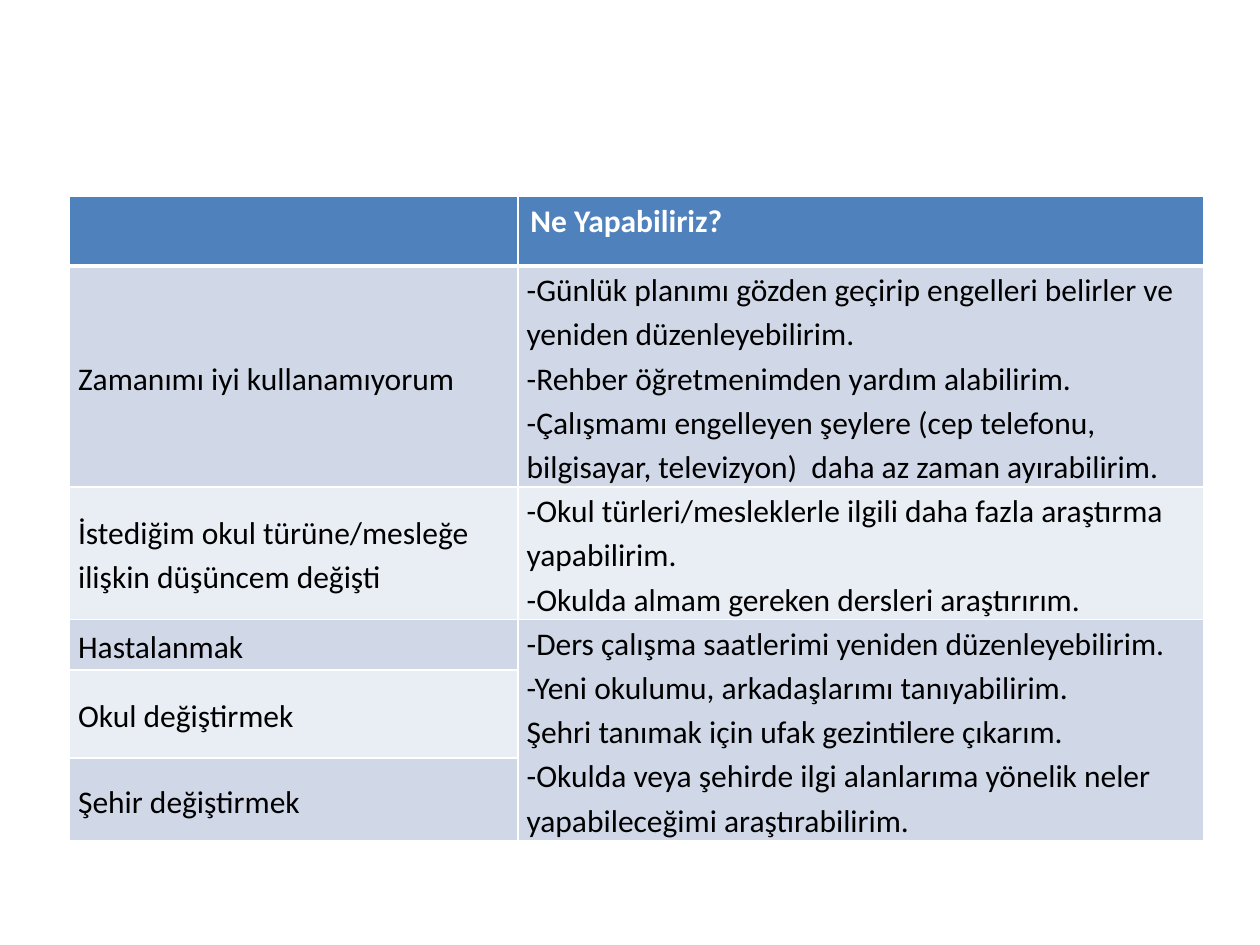
"""Build a slide with a table of study problems and what can be done about them."""
import pptx
import pptx.dml.color
import pptx.enum.text
import pptx.oxml
import pptx.oxml.ns
import pptx.util
from pptx.util import Inches, Pt

HEAD = ["", "Ne Yapabiliriz?"]
ROWS = [
    ("Zamanımı iyi kullanamıyorum", [
        "-Günlük planımı gözden geçirip engelleri belirler ve yeniden düzenleyebilirim.",
        "-Rehber öğretmenimden yardım alabilirim.",
        "-Çalışmamı engelleyen şeylere (cep telefonu, bilgisayar, televizyon)  daha az zaman ayırabilirim."]),
    ("İstediğim okul türüne/mesleğe ilişkin düşüncem değişti", [
        "-Okul türleri/mesleklerle ilgili daha fazla araştırma yapabilirim.",
        "-Okulda almam gereken dersleri araştırırım."]),
    ("Hastalanmak", [
        "-Ders çalışma saatlerimi yeniden düzenleyebilirim.",
        "-Yeni okulumu, arkadaşlarımı tanıyabilirim.",
        "Şehri tanımak için ufak gezintilere çıkarım.",
        "-Okulda veya şehirde ilgi alanlarıma yönelik neler yapabileceğimi araştırabilirim."]),
    ("Okul değiştirmek", []),
    ("Şehir değiştirmek", []),
]
WIDTHS = [3.56, 5.44]
HEIGHTS = [0.55, 1.15, 0.58, 0.4, 0.7, 0.55]
BLUE, BANDS = "4F81BD", ["D0D8E8", "E9EDF4"]
WHITE, BLACK = "FFFFFF", "000000"


def color(code):
    return pptx.dml.color.RGBColor.from_string(code)


def border(cell, row):
    """Draw white cell edges, thick between the header and the body."""
    thick = {(0, "B"), (1, "T")}
    for side in "LRTB":
        width = Pt(3 if (row, side) in thick else 1)
        cell._tc.get_or_add_tcPr().append(pptx.oxml.parse_xml(
            f'<a:ln{side} {pptx.oxml.ns.nsdecls("a")} w="{width}"><a:solidFill>'
            f'<a:srgbClr val="{WHITE}"/></a:solidFill></a:ln{side}>'))


def fill(cell, row, text):
    """Style one cell and set its text."""
    head = row == 0
    border(cell, row)
    cell.fill.solid()
    cell.fill.fore_color.rgb = color(BLUE if head else BANDS[(row - 1) % 2])
    if not head:
        cell.vertical_anchor = pptx.enum.text.MSO_ANCHOR.MIDDLE
        cell.margin_left = cell.margin_right = Inches(0.07)
        cell.margin_top = cell.margin_bottom = 0
    cell.text_frame.text = text
    for para in cell.text_frame.paragraphs:
        if not head:
            para.line_spacing = 1.15
        font = para.font
        font.size, font.name, font.bold = Pt(18), "Calibri", head
        font.color.rgb = color(WHITE if head else BLACK)
        for run in para.runs:
            run.font.size, run.font.name, run.font.bold = Pt(18), "Calibri", head
            run.font.color.rgb = color(WHITE if head else BLACK)


def main():
    deck = pptx.Presentation()
    deck.slide_width, deck.slide_height = Inches(10), Inches(7.5)
    slide = deck.slides.add_slide(deck.slide_layouts[6])
    frame = slide.shapes.add_table(
        len(HEIGHTS), len(WIDTHS), Inches(0.55), Inches(1.56), Inches(9), Inches(5.38))
    table = frame.table
    for col, width in zip(table.columns, WIDTHS):
        col.width = Inches(width)
    for line, height in zip(table.rows, HEIGHTS):
        line.height = Inches(height)
    frame.height = Inches(5.38)
    body = [(left, "\n".join(right)) for left, right in ROWS]
    for row, texts in enumerate([HEAD] + body):
        for col, text in enumerate(texts):
            fill(table.cell(row, col), row, text)
    table.cell(3, 1).merge(table.cell(5, 1))
    deck.save("out.pptx")


if __name__ == "__main__":
    main()
